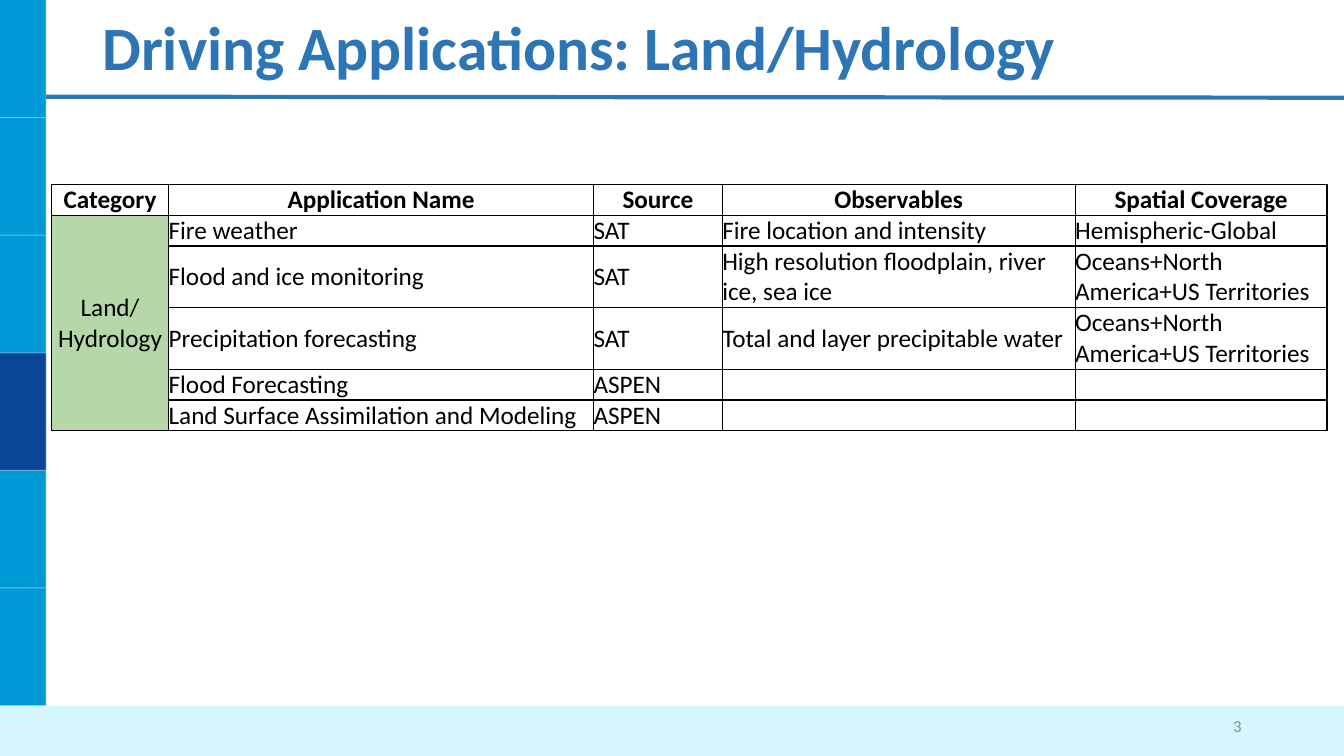
from lxml.etree import SubElement
from pptx import Presentation
from pptx.dml.color import RGBColor
from pptx.enum.shapes import MSO_CONNECTOR as Link, MSO_SHAPE as Kind
from pptx.enum.text import MSO_ANCHOR as Anchor, PP_ALIGN as Align
from pptx.oxml import parse_xml
from pptx.oxml.ns import nsdecls, qn
from pptx.util import Pt

WIDE, HIGH = 960, 540
BAR = 33
STEP = 84
FOOT = 6 * STEP

HEAD = ["Category", "Application Name", "Source", "Observables", "Spatial Coverage"]
AREA = "Oceans+North America+US Territories"
ROWS = [
    ["Land/ Hydrology", "Fire weather", "SAT", "Fire location and intensity", "Hemispheric-Global"],
    ["", "Flood and ice monitoring", "SAT", "High resolution floodplain, river ice, sea ice", AREA],
    ["", "Precipitation forecasting", "SAT", "Total and layer precipitable water", AREA],
    ["", "Flood Forecasting", "ASPEN", "", ""],
    ["", "Land Surface Assimilation and Modeling", "ASPEN", "", ""],
]
COLS = [83.75, 303.5, 92, 252, 180]
TALL = [22, 22, 44, 44, 22, 22]


def color(code):
    return RGBColor.from_string(code)


class Page:
    font = "Calibri"
    blue = "2E75B6"

    def __init__(self, deck):
        self.slide = deck.slides.add_slide(deck.slide_layouts[6])
        self.shapes = self.slide.shapes

    def rect(self, x, y, w, h, fill):
        box = self.shapes.add_shape(Kind.RECTANGLE, Pt(x), Pt(y), Pt(w), Pt(h))
        box.shadow.inherit = False
        box.fill.solid()
        box.fill.fore_color.rgb = color(fill)
        box.line.fill.background()

    def line(self, x1, y1, x2, y2, ink, width, alpha=None):
        """Draw a straight line; alpha is its opacity in percent."""
        rule = self.shapes.add_connector(Link.STRAIGHT, Pt(x1), Pt(y1), Pt(x2), Pt(y2))
        rule.line.color.rgb = color(ink)
        rule.line.width = Pt(width)
        props = rule._element.spPr
        if alpha:
            tone = props.find(".//" + qn("a:srgbClr"))
            SubElement(tone, qn("a:alpha")).set("val", str(alpha * 1000))
        SubElement(props, qn("a:effectLst"))

    def style(self, para, size, ink, bold=False, align=Align.LEFT):
        para.alignment = align
        para.font.name = self.font
        para.font.size = Pt(size)
        para.font.bold = bold
        para.font.color.rgb = color(ink)

    def text(self, x, y, w, h, words, size, ink, bold=False, align=Align.LEFT, space=1.0):
        frame = self.shapes.add_textbox(Pt(x), Pt(y), Pt(w), Pt(h)).text_frame
        frame.word_wrap = True
        frame.vertical_anchor = Anchor.MIDDLE
        para = frame.paragraphs[0]
        para.text = words
        para.line_spacing = space
        self.style(para, size, ink, bold, align)

    def cell(self, cell, words, bold, align, fill):
        cell.margin_left = cell.margin_right = cell.margin_top = cell.margin_bottom = 0
        cell.vertical_anchor = Anchor.MIDDLE
        cell.text = words
        self.style(cell.text_frame.paragraphs[0], 18, "000000", bold, align)
        if fill:
            cell.fill.solid()
            cell.fill.fore_color.rgb = color(fill)
        else:
            cell.fill.background()
        props = cell._tc.get_or_add_tcPr()
        for spot, side in enumerate("LRTB"):
            props.insert(spot, parse_xml(
                f'<a:ln{side} {nsdecls("a")} w="12700"><a:solidFill>'
                f'<a:srgbClr val="000000"/></a:solidFill></a:ln{side}>'))

    def table(self, x, y, cols, tall, rows):
        """Fill a grid whose first row is a header and first column one merged group."""
        grid = self.shapes.add_table(len(tall), len(cols), Pt(x), Pt(y),
                                     Pt(sum(cols)), Pt(sum(tall))).table
        grid.first_row = grid.horz_banding = False
        for col, width in zip(grid.columns, cols):
            col.width = Pt(width)
        for row, height in zip(grid.rows, tall):
            row.height = Pt(height)
        for r, row in enumerate(rows):
            for c, words in enumerate(row):
                head, group = r == 0, r > 0 and c == 0
                self.cell(grid.cell(r, c), words, head,
                          Align.CENTER if head or group else Align.LEFT,
                          "B6D7A8" if group else None)
        grid.cell(1, 0).merge(grid.cell(len(rows) - 1, 0))


def main():
    deck = Presentation()
    deck.slide_width, deck.slide_height = Pt(WIDE), Pt(HIGH)
    page = Page(deck)
    page.rect(0, 0, BAR, HIGH, "0099D8")
    page.rect(0, 3 * STEP, BAR, STEP, "0B4596")
    for part in range(1, 7):
        page.line(0, part * STEP, BAR, part * STEP, "FFFFFF", 0.75, 40)
    page.line(BAR, 0, BAR, HIGH, "FFFFFF", 0.75, 40)
    page.rect(0, FOOT, WIDE, HIGH - FOOT, "D5F5FF")
    page.line(BAR, 69.1, WIDE, 69.8, page.blue, 3)
    page.text(66, 3, 828, 65.5, "Driving Applications: Land/Hydrology", 44, page.blue,
              bold=True, space=0.9)
    page.text(678, FOOT, 216, 28.75, "3", 12, "8C8C8C", align=Align.RIGHT)
    page.table(36.75, 131.75, COLS, TALL, [HEAD] + ROWS)
    deck.save("out.pptx")


if __name__ == "__main__":
    main()
